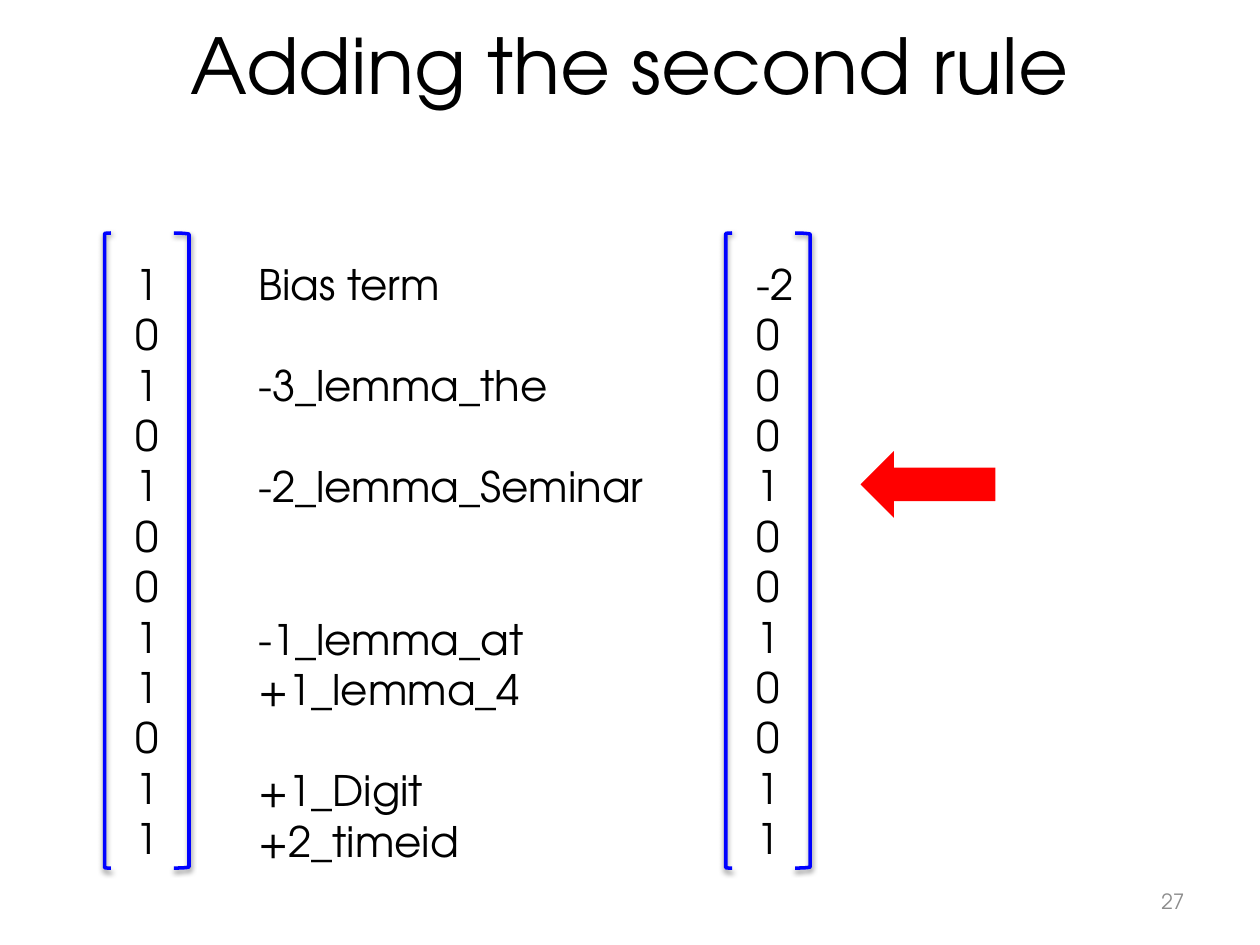
"""Build the slide that adds a second rule to a feature-weight vector."""
from lxml import etree
from pptx import Presentation
from pptx.dml.color import RGBColor
from pptx.enum import shapes, text
from pptx.oxml import parse_xml
from pptx.oxml.ns import nsdecls
from pptx.util import Inches, Pt

BLACK = RGBColor(0x00, 0x00, 0x00)
BLUE = RGBColor(0x00, 0x01, 0xFF)
RED = RGBColor(0xFF, 0x00, 0x00)
GREY = RGBColor(0x8C, 0x8C, 0x8C)
FONT = "TeX Gyre Adventor"
ROW_PITCH = 29.1
BRACKET_SHADOW = (
    f'<a:effectLst {nsdecls("a")}>'
    '<a:outerShdw blurRad="39370" dist="20320" dir="5400000" rotWithShape="0">'
    '<a:srgbClr val="000000"><a:alpha val="38000"/></a:srgbClr>'
    '</a:outerShdw></a:effectLst>'
)


def style(paragraph, size, color=BLACK, align=text.PP_ALIGN.LEFT):
    paragraph.font.name = FONT
    paragraph.font.size = Pt(size)
    paragraph.font.color.rgb = color
    paragraph.alignment = align


def add_column(left, width, rows, wrap):
    frame = slide.shapes.add_textbox(
        Inches(left), Inches(2), Inches(width), Inches(4.95)).text_frame
    frame.word_wrap = wrap
    previous = -1
    for row, entry in rows:
        line = frame.paragraphs[0] if previous < 0 else frame.add_paragraph()
        line.text = entry
        line.space_before = Pt((row - previous - 1) * ROW_PITCH)
        style(line, 24)
        previous = row


prs = Presentation()
prs.slide_width, prs.slide_height = Inches(10), Inches(7.5)
slide = prs.slides.add_slide(prs.slide_layouts[5])

title = slide.shapes.title
title.left, title.top = Inches(0.5), Inches(0)
title.width, title.height = Inches(9), Inches(1.01)
title.text_frame.text = "Adding the second rule"
title.text_frame.vertical_anchor = text.MSO_ANCHOR.MIDDLE
style(title.text_frame.paragraphs[0], 44, align=text.PP_ALIGN.CENTER)

features = ["1", "0", "1", "0", "1", "0", "0", "1", "1", "0", "1", "1"]
weights = ["-2", "0", "0", "0", "1", "0", "0", "1", "0", "0", "1", "1"]
labels = [
    (0, "Bias term"),
    (2, "-3_lemma_the"),
    (4, "-2_lemma_Seminar"),
    (7, "-1_lemma_at"),
    (8, "+1_lemma_4"),
    (10, "+1_Digit"),
    (11, "+2_timeid"),
]

for left, width, vector in [(0.83, 0.39, features), (5.76, 0.5, weights)]:
    for kind, offset, depth in [
        (shapes.MSO_SHAPE.LEFT_BRACKET, 0, 0.05),
        (shapes.MSO_SHAPE.RIGHT_BRACKET, 0.55, 0.12),
    ]:
        bracket = slide.shapes.add_shape(
            kind, Inches(left + offset), Inches(1.85), Inches(depth), Inches(5.04))
        bracket.fill.background()
        bracket.line.color.rgb = BLUE
        bracket.line.width = Pt(2)
        bracket._element.spPr.append(parse_xml(BRACKET_SHADOW))
    add_column(left + 0.15, width, enumerate(vector), False)

add_column(1.95, 3.36, labels, True)

rule_arrow = slide.shapes.add_shape(
    shapes.MSO_SHAPE.LEFT_ARROW, Inches(6.83), Inches(3.58), Inches(1.07), Inches(0.53))
rule_arrow.shadow.inherit = False
rule_arrow.fill.solid()
rule_arrow.fill.fore_color.rgb = RED
rule_arrow.line.fill.background()

page_number = slide.shapes.add_textbox(
    Inches(7.17), Inches(6.95), Inches(2.33), Inches(0.4)).text_frame
page_number.word_wrap = True
page_number.vertical_anchor = text.MSO_ANCHOR.MIDDLE
page_number.text = "27"
style(page_number.paragraphs[0], 12, GREY, text.PP_ALIGN.RIGHT)

prs.save("out.pptx")
